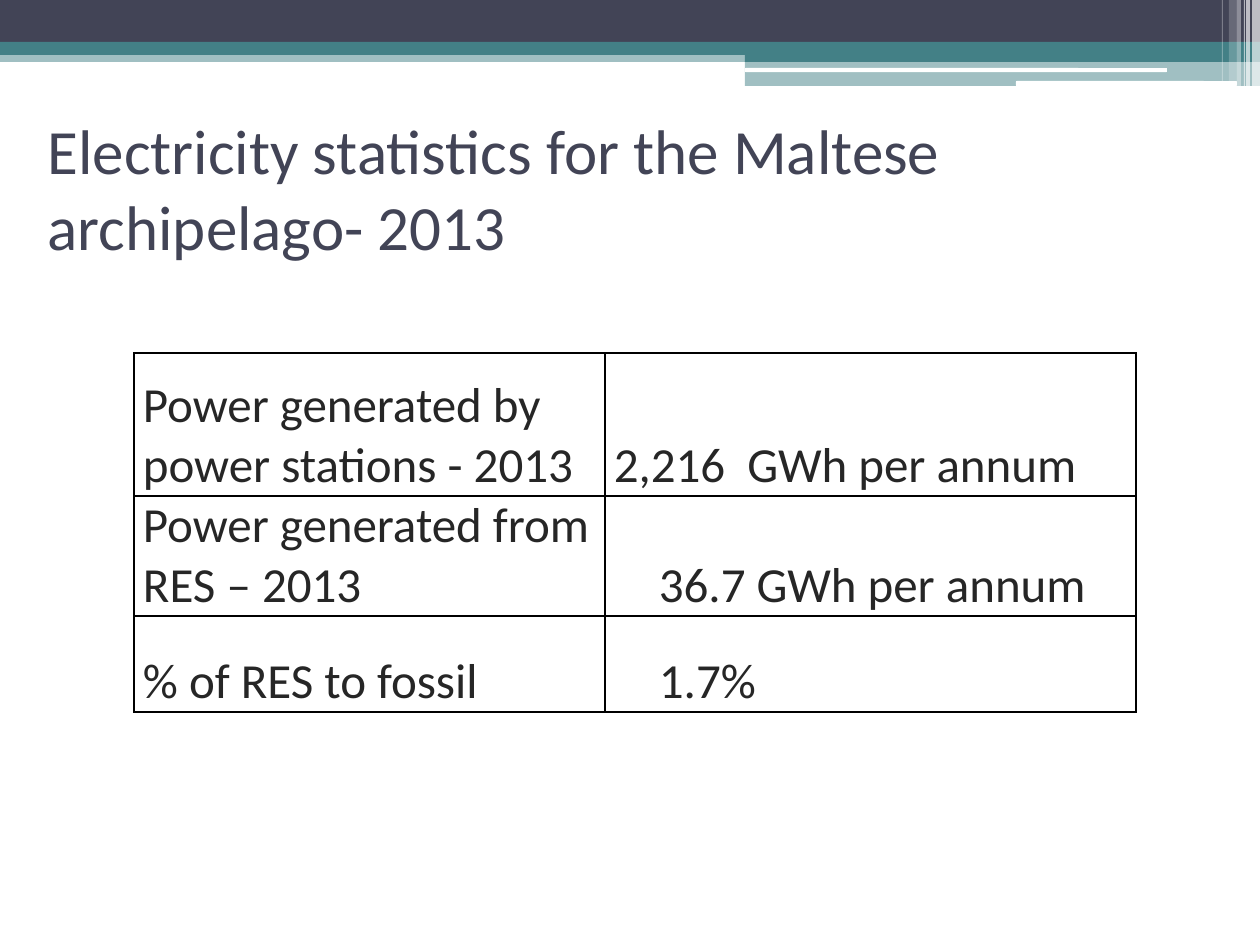
from lxml import etree
from pptx import Presentation
from pptx.dml.color import RGBColor
from pptx.enum.shapes import MSO_SHAPE
from pptx.enum.text import MSO_ANCHOR, PP_ALIGN
from pptx.oxml.ns import qn
from pptx.util import Emu, Pt

RECT, ROUND = MSO_SHAPE.RECTANGLE, MSO_SHAPE.ROUNDED_RECTANGLE
MIDDLE, BOTTOM, LEFT = MSO_ANCHOR.MIDDLE, MSO_ANCHOR.BOTTOM, PP_ALIGN.LEFT
NAVY, TEAL, WHITE, INK, BLACK = "424456", "438086", "FFFFFF", "262626", "000000"


def px(length):
    return Emu(round(length * 914400 / 126))


def paint(fill, color, opacity=100):
    fill.solid()
    fill.fore_color.rgb = RGBColor.from_string(color)
    if opacity < 100:
        tint = fill._xPr.find(qn("a:solidFill"))[0]
        etree.SubElement(tint, qn("a:alpha"), val=str(opacity * 1000))


deck = Presentation()
deck.slide_width, deck.slide_height = px(1260), px(945)
page = deck.slides.add_slide(deck.slide_layouts[5])
paint(page.background.fill, WHITE)

bars = [
    (RECT, 0, 50, 1260, 12, TEAL, 50),
    (RECT, 0, 0, 1260, 43, NAVY, 100),
    (RECT, 0, 42, 1260, 13, TEAL, 100),
    (RECT, 745, 49, 515, 13, TEAL, 100),
    (RECT, 745, 61, 515, 25, TEAL, 50),
    (ROUND, 745, 68, 422, 4, WHITE, 100),
    (ROUND, 1016, 81, 221, 5, WHITE, 100),
]
stripes = [
    (1252, 8, 86, 65),
    (1246, 4, 86, 65),
    (1244, 1, 86, 60),
    (1237, 4, 86, 40),
    (1229, 8, 81, 20),
    (1222, 1, 81, 30),
]
bars += [(RECT, left, 0, width, height, WHITE, opacity)
         for left, width, height, opacity in stripes]
for kind, left, top, width, height, color, opacity in bars:
    bar = page.shapes.add_shape(kind, px(left), px(top), px(width), px(height))
    bar.shadow.inherit = False
    bar.line.fill.background()
    paint(bar.fill, color, opacity)

title = page.shapes.title
title.left, title.top, title.width, title.height = px(35), px(118), px(1100), px(138)
title.text_frame.vertical_anchor = MIDDLE
para = title.text_frame.paragraphs[0]
para.alignment = LEFT
span = para.add_run()
span.text = "Electricity statistics for the Maltese archipelago- 2013"
span.font.size = Pt(36)
span.font.name = "Calibri"
span.font.color.rgb = RGBColor.from_string(NAVY)

rows = [
    (143, "Power generated by power stations - 2013", "2,216  GWh per annum", 9),
    (120, "Power generated from RES – 2013", "36.7 GWh per annum", 54),
    (96, "% of RES to fossil", "1.7%", 54),
]
table = page.shapes.add_table(3, 2, px(134), px(353), px(1002), px(359)).table
table.first_row = table.horz_banding = False
table.columns[0].width, table.columns[1].width = px(471), px(531)
for index, (height, label, value, inset) in enumerate(rows):
    table.rows[index].height = px(height)
    for column, (words, margin) in enumerate([(label, 9), (value, inset)]):
        cell = table.cell(index, column)
        cell.vertical_anchor = BOTTOM
        cell.margin_left, cell.margin_right = px(margin), px(9)
        cell.margin_top = cell.margin_bottom = 0
        span = cell.text_frame.paragraphs[0].add_run()
        span.text = words
        span.font.size = Pt(28)
        span.font.name = "Calibri"
        span.font.color.rgb = RGBColor.from_string(INK)
        properties = cell._tc.get_or_add_tcPr()
        for side in ("a:lnL", "a:lnR", "a:lnT", "a:lnB"):
            edge = etree.SubElement(properties, qn(side), w=str(Pt(1)))
            solid = etree.SubElement(edge, qn("a:solidFill"))
            etree.SubElement(solid, qn("a:srgbClr"), val=BLACK)
        paint(cell.fill, WHITE)

deck.save("out.pptx")
